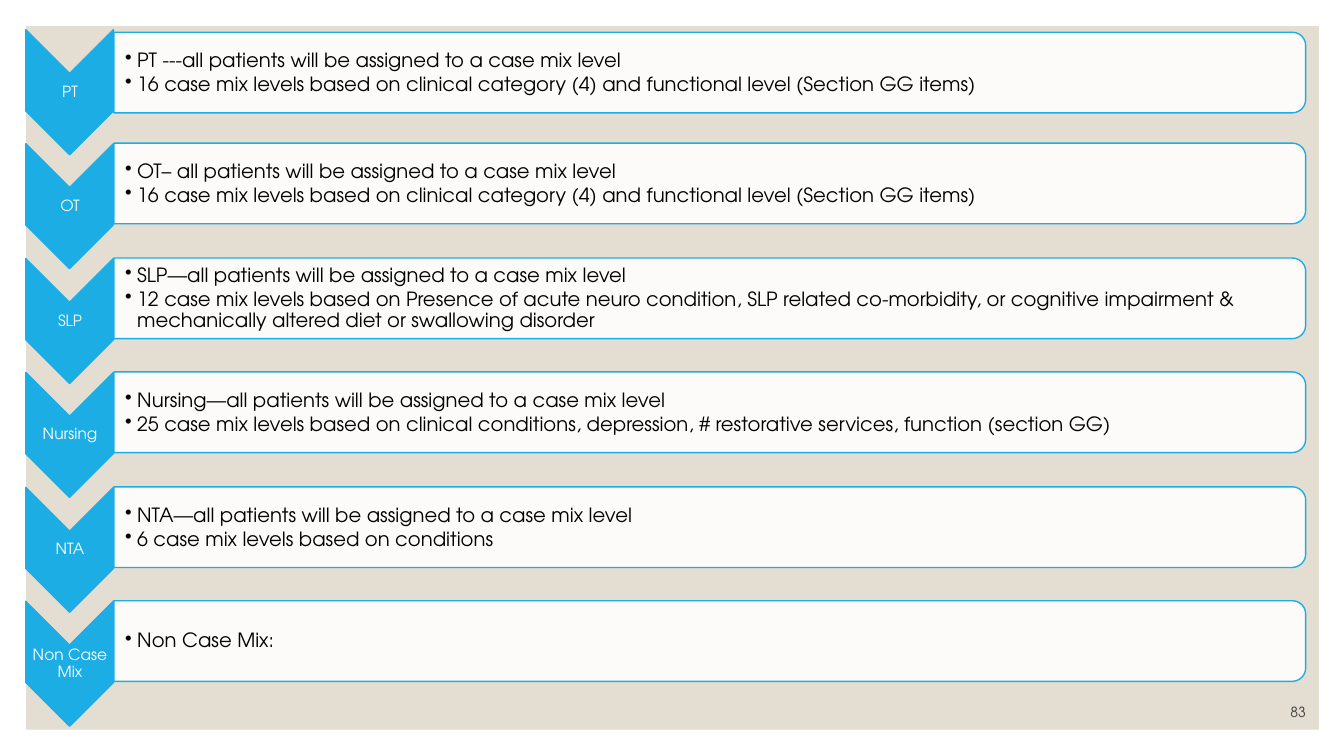
"""Build a slide of payment components as chevrons with bulleted boxes."""
from dataclasses import dataclass

from lxml import etree
from pptx import Presentation
from pptx.dml.color import RGBColor
from pptx.enum.shapes import MSO_SHAPE
from pptx.enum.text import MSO_ANCHOR, PP_ALIGN
from pptx.oxml.ns import qn
from pptx.util import Emu, Pt

RECT = MSO_SHAPE.RECTANGLE
CHEVRON = MSO_SHAPE.CHEVRON
ROUND_TOP = MSO_SHAPE.ROUND_2_SAME_RECTANGLE
MIDDLE, BOTTOM = MSO_ANCHOR.MIDDLE, MSO_ANCHOR.BOTTOM
LEFT, CENTER, RIGHT = PP_ALIGN.LEFT, PP_ALIGN.CENTER, PP_ALIGN.RIGHT

EMU_PER_PX = 9144
BLANK_LAYOUT = 6
PITCH = 113.4
CHEVRON_LEFT, CHEVRON_CENTER, CHEVRON_W, CHEVRON_H = 26, 91, 87, 124
BOX_LEFT, BOX_CENTER, BOX_W, BOX_H = 113, 69, 1182, 80
LABEL_H, BODY_W, BODY_H = 37, 1179, 73
BULLET_INDENT = 12


@dataclass(frozen=True)
class Theme:
    font: str = "TeX Gyre Adventor"
    panel: str = "E3DED1"
    accent: str = "1CADE4"
    box: str = "FFFFFF"
    label: str = "FFFFFF"
    body: str = "000000"
    number: str = "404040"
    label_pt: int = 11
    body_pt: int = 14
    number_pt: int = 10
    box_opacity: int = 90


@dataclass(frozen=True)
class Area:
    left: int
    top: int
    width: int
    height: int

    def emu(self) -> list[Emu]:
        return [px(v) for v in (self.left, self.top, self.width, self.height)]


@dataclass(frozen=True)
class TextStyle:
    size: int
    color: str
    align: PP_ALIGN
    anchor: MSO_ANCHOR = MIDDLE
    insets: tuple[int, int, int, int] = (1, 1, 1, 1)
    spacing: float = 0.9
    after: int = 0
    bullet: bool = False


@dataclass(frozen=True)
class Component:
    label: str
    points: tuple[str, ...]
    box_shift: int = 0


THEME = Theme()
LABEL = TextStyle(THEME.label_pt, THEME.label, CENTER, after=4)
BODY = TextStyle(THEME.body_pt, THEME.body, LEFT, insets=(11, 1, 1, 1),
                 after=2, bullet=True)
NUMBER = TextStyle(THEME.number_pt, THEME.number, RIGHT, BOTTOM,
                   (10, 5, 10, 5), 1.0)

THERAPY_LEVELS = ("16 case mix levels based on clinical category (4) "
                  "and functional level (Section GG items)")
COMPONENTS = (
    Component("PT", ("PT ---all patients will be assigned to a case mix level",
                     THERAPY_LEVELS), box_shift=3),
    Component("OT", ("OT– all patients will be assigned to a case mix level",
                     THERAPY_LEVELS)),
    Component("SLP", (
        "SLP—all patients will be assigned to a case mix level",
        "12 case mix levels based on Presence of acute neuro condition, "
        "SLP related co-morbidity, or cognitive impairment & "
        "mechanically altered diet or swallowing disorder")),
    Component("Nursing", (
        "Nursing—all patients will be assigned to a case mix level",
        "25 case mix levels based on clinical conditions, depression, "
        "# restorative services, function (section GG)")),
    Component("NTA", ("NTA—all patients will be assigned to a case mix level",
                      "6 case mix levels based on conditions")),
    Component("Non Case Mix", ("Non Case Mix:",)),
)


def px(value: int) -> Emu:
    return Emu(value * EMU_PER_PX)


def apply(target, values: dict) -> None:
    for name, value in values.items():
        setattr(target, name, value)


def add_block(slide, kind: MSO_SHAPE, area: Area, fill: str,
              line: str | None = None, opacity: int = 100):
    sp = slide.shapes.add_shape(kind, *area.emu())
    sp.shadow.inherit = False
    sp.fill.solid()
    sp.fill.fore_color.rgb = RGBColor.from_string(fill)
    if opacity < 100:
        color = sp.fill._xPr.find(qn("a:solidFill"))[0]
        etree.SubElement(color, qn("a:alpha"), val=str(opacity * 1000))
    if line:
        sp.line.color.rgb = RGBColor.from_string(line)
        sp.line.width = Pt(1)
    else:
        sp.line.fill.background()
    return sp


def add_turned(slide, kind: MSO_SHAPE, left: int, center: int, width: int,
               height: int, fill: str, opacity: int = 100) -> None:
    area = Area(left + (width - height) // 2, center - width // 2,
                height, width)
    sp = add_block(slide, kind, area, fill, THEME.accent, opacity)
    sp.rotation = 90


def add_text(slide, area: Area, lines: tuple[str, ...],
             style: TextStyle) -> None:
    tf = slide.shapes.add_textbox(*area.emu()).text_frame
    sides = ("margin_left", "margin_top", "margin_right", "margin_bottom")
    apply(tf, {"word_wrap": True, "vertical_anchor": style.anchor,
               **dict(zip(sides, map(px, style.insets)))})
    for i, line in enumerate(lines):
        p = tf.add_paragraph() if i else tf.paragraphs[0]
        apply(p, {"alignment": style.align, "line_spacing": style.spacing,
                  "space_after": Pt(style.after)})
        if style.bullet:
            p.level = 1
            ppr = p._p.get_or_add_pPr()
            ppr.set("marL", str(px(BULLET_INDENT)))
            ppr.set("indent", str(px(-BULLET_INDENT)))
            etree.SubElement(ppr, qn("a:buChar"), char="•")
        r = p.add_run()
        r.text = line
        apply(r.font, {"name": THEME.font, "size": Pt(style.size)})
        r.font.color.rgb = RGBColor.from_string(style.color)


def add_component(slide, item: Component, offset: int) -> None:
    chevron_y = CHEVRON_CENTER + offset
    box_y = BOX_CENTER + offset + item.box_shift
    add_turned(slide, CHEVRON, CHEVRON_LEFT, chevron_y, CHEVRON_W, CHEVRON_H,
               THEME.accent)
    add_text(slide, Area(CHEVRON_LEFT, chevron_y - LABEL_H // 2,
                         CHEVRON_W, LABEL_H), (item.label,), LABEL)
    add_turned(slide, ROUND_TOP, BOX_LEFT, box_y, BOX_W, BOX_H,
               THEME.box, THEME.box_opacity)
    add_text(slide, Area(BOX_LEFT, box_y - BODY_H // 2, BODY_W, BODY_H),
             item.points, BODY)


def main() -> None:
    prs = Presentation()
    apply(prs, {"slide_width": px(1333), "slide_height": px(750)})
    slide = prs.slides.add_slide(prs.slide_layouts[BLANK_LAYOUT])
    add_block(slide, RECT, Area(26, 26, 1282, 698), THEME.panel)
    for i, item in enumerate(COMPONENTS):
        add_component(slide, item, round(i * PITCH))
    add_text(slide, Area(1145, 690, 160, 30), ("83",), NUMBER)
    prs.save("out.pptx")


if __name__ == "__main__":
    main()
